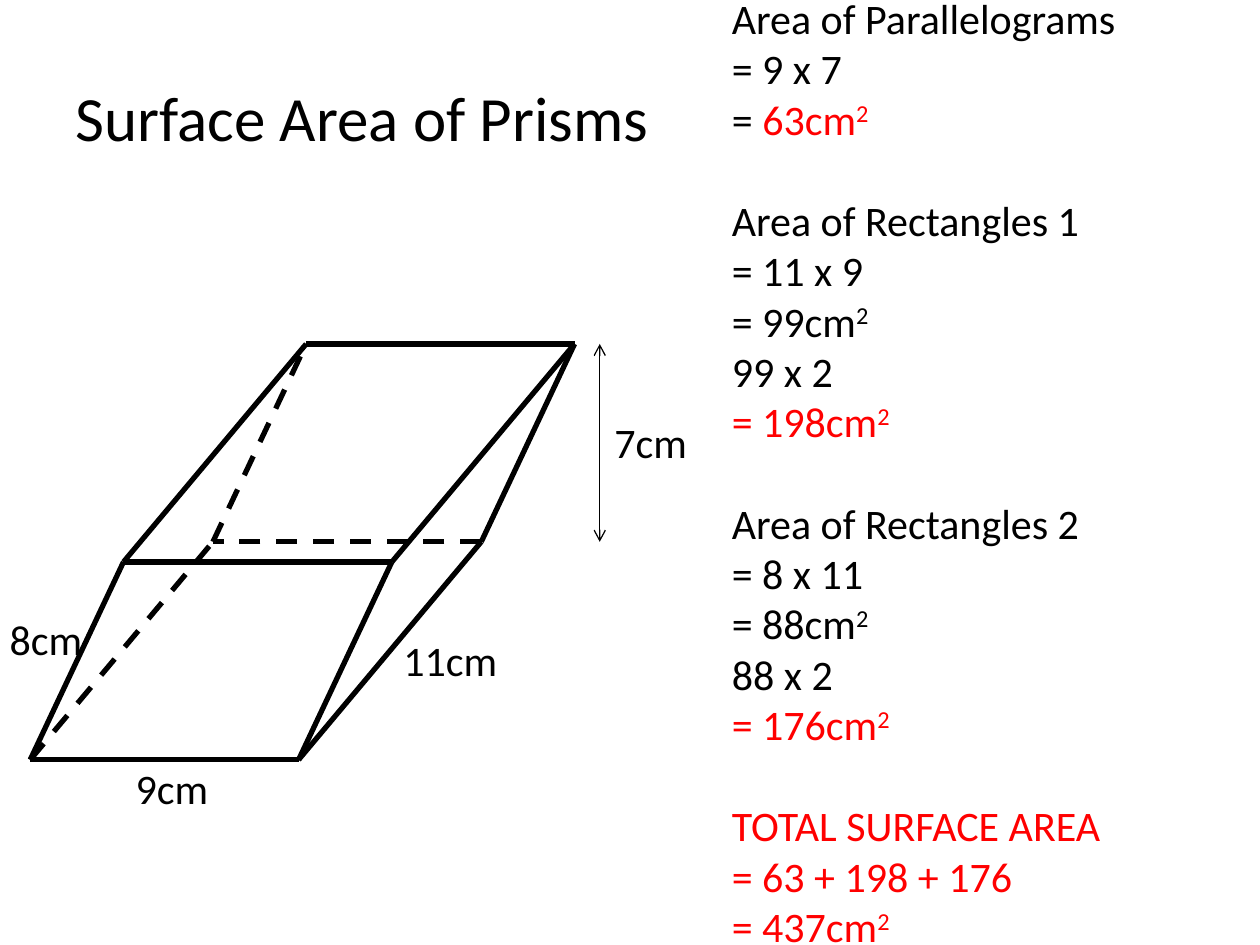
from dataclasses import dataclass

from lxml import etree
from pptx import Presentation
from pptx import util as u
from pptx.dml.color import RGBColor
from pptx.enum import dml, shapes, text
from pptx.oxml.ns import qn

PX = 9144  # EMU per px, at 100 px to the inch
FONT = "Calibri"
COLORS = {"ink": "000000", "result": "FF0000", "paper": "FFFFFF"}


@dataclass
class Edge:
    start: tuple[int, int]
    end: tuple[int, int]
    dashed: bool = False
    width: float = 3
    arrows: bool = False


@dataclass
class Label:
    text: str
    left: int
    top: int


@dataclass
class Row:
    plain: str = ""
    red: str = ""
    squared: bool = False
    gap: bool = False  # one line of space above


def px(n: int) -> u.Emu:
    return u.Emu(n * PX)


def rgb(name: str) -> RGBColor:
    return RGBColor.from_string(COLORS[name])


def style(p, size: int, align=text.PP_ALIGN.LEFT) -> None:
    p.alignment = align
    p.font.name, p.font.size = FONT, u.Pt(size)
    p.font.color.rgb = rgb("ink")


def add_edge(slide, e: Edge) -> None:
    c = slide.shapes.add_connector(
        shapes.MSO_CONNECTOR.STRAIGHT, *map(px, e.start + e.end))
    c.line.color.rgb = rgb("ink")
    c.line.width = u.Pt(e.width)
    if e.dashed:
        c.line.dash_style = dml.MSO_LINE.DASH
    if e.arrows:
        ln = c.line._get_or_add_ln()
        for tag in ("a:headEnd", "a:tailEnd"):
            etree.SubElement(ln, qn(tag), type="arrow")
    etree.SubElement(c._element.spPr, qn("a:effectLst"))


def add_textbox(slide, left: int, top: int, width: int, height: int):
    sp = slide.shapes.add_textbox(*map(px, (left, top, width, height)))
    tf = sp.text_frame
    tf.word_wrap = True
    tf.auto_size = text.MSO_AUTO_SIZE.SHAPE_TO_FIT_TEXT
    return tf


def add_label(slide, label: Label) -> None:
    p = add_textbox(slide, label.left, label.top, 143, 50).paragraphs[0]
    p.text = label.text
    style(p, 24, text.PP_ALIGN.CENTER)


def fill_row(p, row: Row) -> None:
    style(p, 24)
    if row.gap:
        p.space_before = u.Pt(29)
    parts = [(row.plain, "ink"), (row.red, "result")]
    for content, color in parts:
        if content:
            r = p.add_run()
            r.text = content
            r.font.color.rgb = rgb(color)
    if row.squared:
        r = p.add_run()
        r.text = "2"
        r.font.color.rgb = rgb("result" if row.red else "ink")
        r._r.get_or_add_rPr().set("baseline", "30000")


# Prism: the back face is the front face moved by DEPTH
FRONT = [(98, 446), (311, 446), (237, 603), (24, 603)]
DEPTH = (145, -173)
BACK = [(x + DEPTH[0], y + DEPTH[1]) for x, y in FRONT]
HIDDEN = BACK[3]  # every edge at this corner is dashed


def prism_edges() -> list[Edge]:
    pairs = []
    for face in (FRONT, BACK):
        pairs += zip(face, face[1:] + face[:1])
    pairs += zip(FRONT, BACK)
    return [Edge(a, b, dashed=HIDDEN in (a, b)) for a, b in pairs]


HEIGHT_ARROW = Edge((476, 273), (476, 430), width=0.75, arrows=True)
LABELS = [
    Label("9cm", 65, 600),
    Label("8cm", -35, 482),
    Label("11cm", 286, 499),
    Label("7cm", 445, 326),
]
WORKING = [
    Row("Area of Parallelograms"),
    Row("= 9 x 7"),
    Row("= ", "63cm", squared=True),
    Row("Area of Rectangles 1", gap=True),
    Row("= 11 x 9"),
    Row("= 99cm", squared=True),
    Row("99 x 2"),
    Row(red="= 198cm", squared=True),
    Row("Area of Rectangles 2", gap=True),
    Row("= 8 x 11"),
    Row("= 88cm", squared=True),
    Row("88 x 2"),
    Row(red="= 176cm", squared=True),
    Row(red="TOTAL SURFACE AREA", gap=True),
    Row(red="= 63 + 198 + 176"),
    Row(red="= 437cm", squared=True),
]


def main() -> None:
    prs = Presentation()
    prs.slide_width, prs.slide_height = px(1000), px(750)
    slide = prs.slides.add_slide(prs.slide_layouts[5])
    slide.background.fill.solid()
    slide.background.fill.fore_color.rgb = rgb("paper")

    # Title
    title = slide.shapes.title
    title.left, title.top, title.width, title.height = map(px, (50, 30, 900, 125))
    title.text_frame.text = "Surface Area of Prisms"
    title.text_frame.vertical_anchor = text.MSO_ANCHOR.MIDDLE
    style(title.text_frame.paragraphs[0], 36)

    # Prism with its measurements
    for edge in prism_edges() + [HEIGHT_ARROW]:
        add_edge(slide, edge)
    for label in LABELS:
        add_label(slide, label)

    # Working
    tf = add_textbox(slide, 571, -11, 429, 778)
    for i, row in enumerate(WORKING):
        fill_row(tf.add_paragraph() if i else tf.paragraphs[0], row)

    prs.save("out.pptx")


if __name__ == "__main__":
    main()
